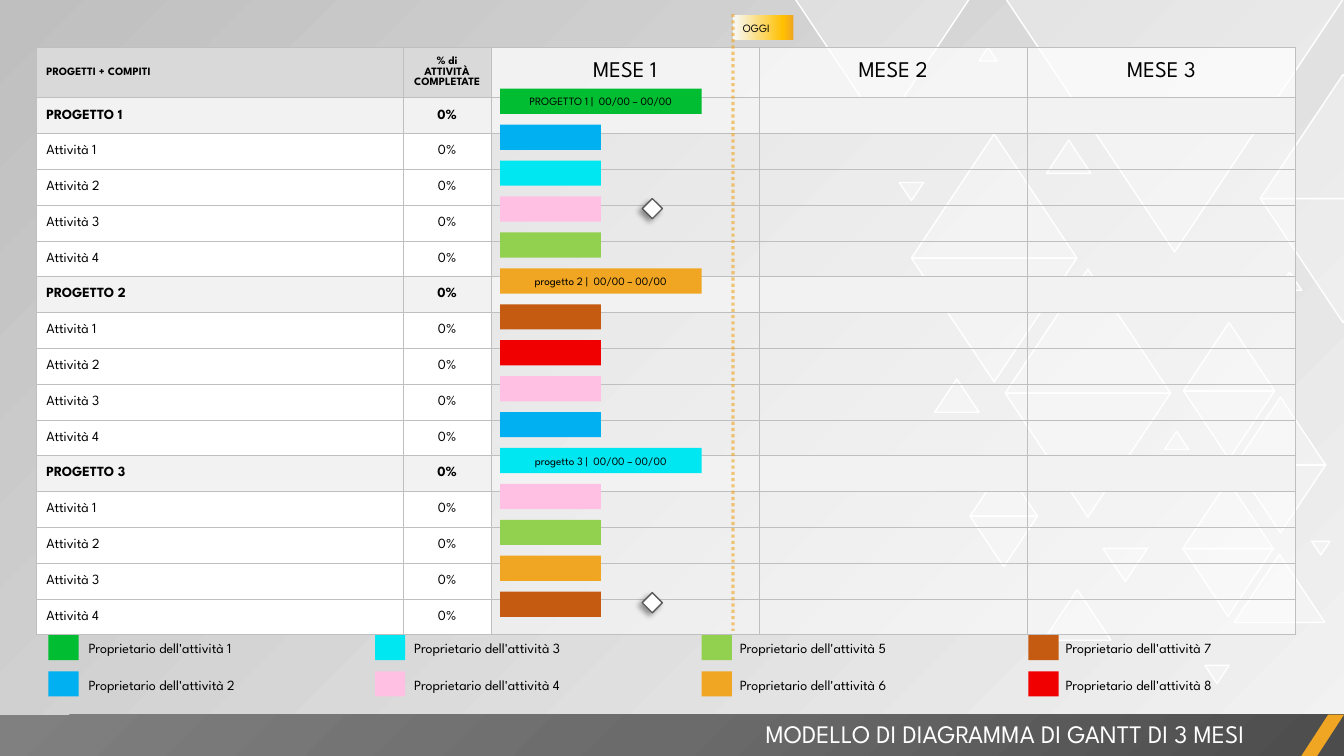
from lxml import etree
from pptx import Presentation
from pptx import util as u
from pptx.dml.color import RGBColor
from pptx.enum import dml, shapes, text
from pptx.oxml import parse_xml
from pptx.oxml.ns import nsdecls, qn

FONT = "League Spartan"
SHAPE = shapes.MSO_SHAPE
LEFT, CENTER, RIGHT = text.PP_ALIGN.LEFT, text.PP_ALIGN.CENTER, text.PP_ALIGN.RIGHT
COLORS = {
    "green": "00BD32", "blue": "00B0F0", "cyan": "00E7F2", "pink": "FFC0E3",
    "lime": "92D050", "orange": "F0A622", "brown": "C55A11", "red": "F10002",
    "white": "FFFFFF", "black": "000000", "outline": "595959", "border": "BFBFBF",
    "header": "D9D9D9", "project": "F2F2F2", "gold": "FFC000", "ice": "F7FAFD",
    "dark": "4C4C4C", "mid": "6B6B6B", "light": "808080",
}
# left, top, width, points down
TRIANGLES = [
    (9.04, 1.33, 1.64, 0), (9.04, 2.56, 1.64, 1), (9.97, 2.67, 1.64, 0),
    (9.97, 3.9, 1.64, 1), (9.97, -0.02, 3.36, 1), (12.24, 5.5, 0.9, 0),
    (11.73, 5.44, 0.9, 1), (11.73, 4.77, 0.9, 0), (11.74, 3.2, 0.9, 0),
    (11.74, 3.88, 0.9, 1), (12.25, 3.94, 0.9, 0), (12.25, 4.61, 0.9, 1),
    (10.35, 5.85, 0.67, 0), (9.62, 5.12, 0.67, 1), (9.62, 4.62, 0.67, 0),
    (12.5, 0.74, 1.64, 0), (12.5, 1.97, 1.64, 1), (10.94, 5.44, 0.44, 1),
    (9.27, 3.76, 0.44, 0), (11.55, 4.28, 0.24, 0), (11.95, 6.6, 0.24, 1),
    (8.92, 1.81, 0.24, 1), (12.67, 2.7, 0.24, 0), (9.71, 0.47, 0.18, 0),
    (13.01, 5.37, 0.18, 1), (10.38, 1.39, 0.44, 0), (7.88, -0.02, 1.74, 1),
]
# Each project: label on its bar, bar colour, task colours
PROJECTS = [
    ("PROGETTO 1", "green", ["blue", "cyan", "pink", "lime"]),
    ("progetto 2", "orange", ["brown", "red", "pink", "blue"]),
    ("progetto 3", "cyan", ["pink", "lime", "orange", "brown"]),
]
OWNERS = ["green", "blue", "cyan", "pink", "lime", "orange", "brown", "red"]


def cm(inches):
    return u.Cm(inches * 2.54)


def rgb(name):
    return RGBColor.from_string(COLORS[name])


def fade(el, percent):
    """Set the opacity of the first colour inside an element."""
    color = next(el.iter(qn("a:srgbClr")))
    etree.SubElement(color, qn("a:alpha"), val=str(percent * 1000))


def set_gradient(fill, el, stops, direction):
    fill.gradient()
    grad = next(el.iter(qn("a:gradFill")))
    marks = "".join(f'<a:gs pos="{pos * 1000}"><a:srgbClr val="{COLORS[c]}"/></a:gs>'
                    for pos, c in stops)
    new = parse_xml(f'<a:gradFill {nsdecls("a")} rotWithShape="1">'
                    f"<a:gsLst>{marks}</a:gsLst>{direction}</a:gradFill>")
    grad.getparent().replace(grad, new)
    return new


def write(tf, words, size, color="black", align=LEFT, bold=False):
    p = tf.paragraphs[0]
    p.text, p.alignment = words, align
    p.font.name, p.font.size, p.font.bold = FONT, u.Pt(size), bold
    p.font.color.rgb = rgb(color)


def add_box(parent, kind, x, y, w, h, color, line=None):
    sp = parent.add_shape(kind, cm(x), cm(y), cm(w), cm(h))
    sp.shadow.inherit = False
    sp.fill.solid()
    sp.fill.fore_color.rgb = rgb(color)
    if line:
        sp.line.color.rgb, sp.line.width = rgb(line), u.Pt(1)
    else:
        sp.line.fill.background()
    return sp


def add_label(parent, words, x, y, w, h, size, color="black", align=LEFT):
    tf = parent.add_textbox(cm(x), cm(y), cm(w), cm(h)).text_frame
    tf.word_wrap = True
    tf.auto_size = text.MSO_AUTO_SIZE.SHAPE_TO_FIT_TEXT
    write(tf, words, size, color, align)


def add_milestone(parent, x, y):
    sp = add_box(parent, SHAPE.DIAMOND, x, y, 0.2, 0.2, "white", "outline")
    effects = next(sp._element.iter(qn("a:effectLst")))
    effects.append(parse_xml(
        f'<a:outerShdw {nsdecls("a")} blurRad="{u.Pt(4)}" dist="{u.Pt(3)}" dir="8100000">'
        '<a:srgbClr val="000000"><a:alpha val="40000"/></a:srgbClr></a:outerShdw>'))


def style_cell(cell, color, opacity=100):
    cell.vertical_anchor = text.MSO_ANCHOR.MIDDLE
    cell.fill.solid()
    cell.fill.fore_color.rgb = rgb(color)
    tc_pr = cell._tc.get_or_add_tcPr()
    if opacity < 100:
        fade(tc_pr, opacity)
    for i, side in enumerate(("lnL", "lnR", "lnT", "lnB")):
        tc_pr.insert(i, parse_xml(
            f'<a:{side} {nsdecls("a")} w="{u.Pt(0.5)}"><a:solidFill>'
            f'<a:srgbClr val="{COLORS["border"]}"/></a:solidFill></a:{side}>'))


def add_schedule(parent):
    tbl = parent.add_table(16, 5, cm(0.36), cm(0.47), cm(12.49), cm(5.82)).table
    tbl.first_row = tbl.horz_banding = False
    for col, width in zip(tbl.columns, (3.64, 0.87, 2.66, 2.66, 2.66)):
        col.width = cm(width)
    for i, row in enumerate(tbl.rows):
        row.height = cm(5.33 / 15 if i else 0.49)

    # Header row
    for c, words in enumerate(("PROGETTI + COMPITI", "% di ATTIVITÀ COMPLETATE",
                               "MESE 1", "MESE 2", "MESE 3")):
        cell, month = tbl.cell(0, c), c > 1
        style_cell(cell, "white" if month else "header", 75 if month else 100)
        write(cell.text_frame, words, 16 if month else 8,
              align=CENTER if c else LEFT, bold=not month)

    # Projects and their tasks
    for r in range(1, 16):
        project, task = divmod(r - 1, 5)
        heading = task == 0
        name = f"PROGETTO {project + 1}" if heading else f"Attività {task}"
        for c, words in enumerate((name, "0%", "", "", "")):
            cell = tbl.cell(r, c)
            style_cell(cell, "project" if heading else "white",
                       100 if heading or c < 2 else 50)
            write(cell.text_frame, words, 10, align=CENTER if c else LEFT, bold=heading)
            if not words:
                cell.margin_top = cell.margin_bottom = 0


def add_bars(parent):
    for i, (name, color, tasks) in enumerate(PROJECTS):
        for j, bar_color in enumerate([color] + tasks):
            top = 0.88 + 4.99 * (5 * i + j) / 14
            sp = add_box(parent, SHAPE.RECTANGLE, 4.96, top, 1 if j else 2, 0.25, bar_color)
            if j == 0:
                sp.text_frame.vertical_anchor = text.MSO_ANCHOR.MIDDLE
                write(sp.text_frame, f"{name} |  00/00 – 00/00", 8, align=CENTER)


def add_legend(parent):
    for i, color in enumerate(OWNERS):
        col, row = divmod(i, 2)
        y = 6.3 + 0.36 * row
        add_box(parent, SHAPE.RECTANGLE, 0.48 + 3.24 * col, y, 0.3, 0.25, color)
        add_label(parent, f"Proprietario dell'attività {i + 1}",
                  0.78 + 3.23 * col, y, 2.4, 0.27, 10)


def add_footer(parent):
    fb = parent.build_freeform(0, cm(7.09))
    fb.add_line_segments([(cm(13.33), cm(7.09)), (cm(13.33), cm(7.51)), (0, cm(7.51))])
    sp = fb.convert_to_shape()
    sp.shadow.inherit = False
    sp.line.fill.background()
    set_gradient(sp.fill, sp._element, [(0, "dark"), (50, "mid"), (100, "light")],
                 '<a:path path="circle"><a:fillToRect l="100000" t="100000"/></a:path>')
    accent = add_box(parent, SHAPE.PARALLELOGRAM, 12.9, 7.09, 0.43, 0.42, "orange")
    accent.adjustments[0] = 0.65
    add_label(parent, "MODELLO DI DIAGRAMMA DI GANTT DI 3 MESI",
              5.25, 7.08, 7.19, 0.4, 18, "white", RIGHT)


def add_today(parent):
    group = parent.add_group_shape().shapes
    flag = add_box(group, SHAPE.RECTANGLE, 7.27, 0.15, 0.6, 0.25, "gold")
    set_gradient(flag.fill, flag._element, [(0, "ice"), (83, "gold"), (100, "orange")],
                 '<a:lin ang="0" scaled="0"/>')
    flag.text_frame.vertical_anchor = text.MSO_ANCHOR.MIDDLE
    write(flag.text_frame, "OGGI", 8)
    line = group.add_connector(shapes.MSO_CONNECTOR.STRAIGHT,
                               cm(7.27), cm(0.14), cm(7.27), cm(6.26))
    line.line.color.rgb, line.line.width = rgb("orange"), u.Pt(2.25)
    line.line.dash_style = dml.MSO_LINE.ROUND_DOT
    fade(line._element.spPr, 60)
    etree.SubElement(line._element.spPr, qn("a:effectLst"))


def main():
    prs = Presentation()
    prs.slide_width, prs.slide_height = cm(13.33), cm(7.5)
    s = prs.slides.add_slide(prs.slide_layouts[6])

    # Background with triangles
    grad = set_gradient(s.background.fill, s._element, [(0, "project"), (100, "border")],
                        '<a:lin ang="13500000" scaled="0"/>')
    fade(grad, 40)
    pattern = s.shapes.add_group_shape().shapes
    for x, y, w, down in TRIANGLES:
        sp = add_box(pattern, SHAPE.ISOSCELES_TRIANGLE, x, y, w, 0.75 * w, "white", "white")
        sp.rotation = 180 * down
        fade(sp._element.spPr, 30)

    # Chart content
    add_footer(s.shapes)
    add_schedule(s.shapes)
    add_bars(s.shapes)
    add_legend(s.shapes)
    for y in (1.97, 5.88):
        add_milestone(s.shapes, 6.37, y)
    add_today(s.shapes)
    prs.save("out.pptx")


if __name__ == "__main__":
    main()
